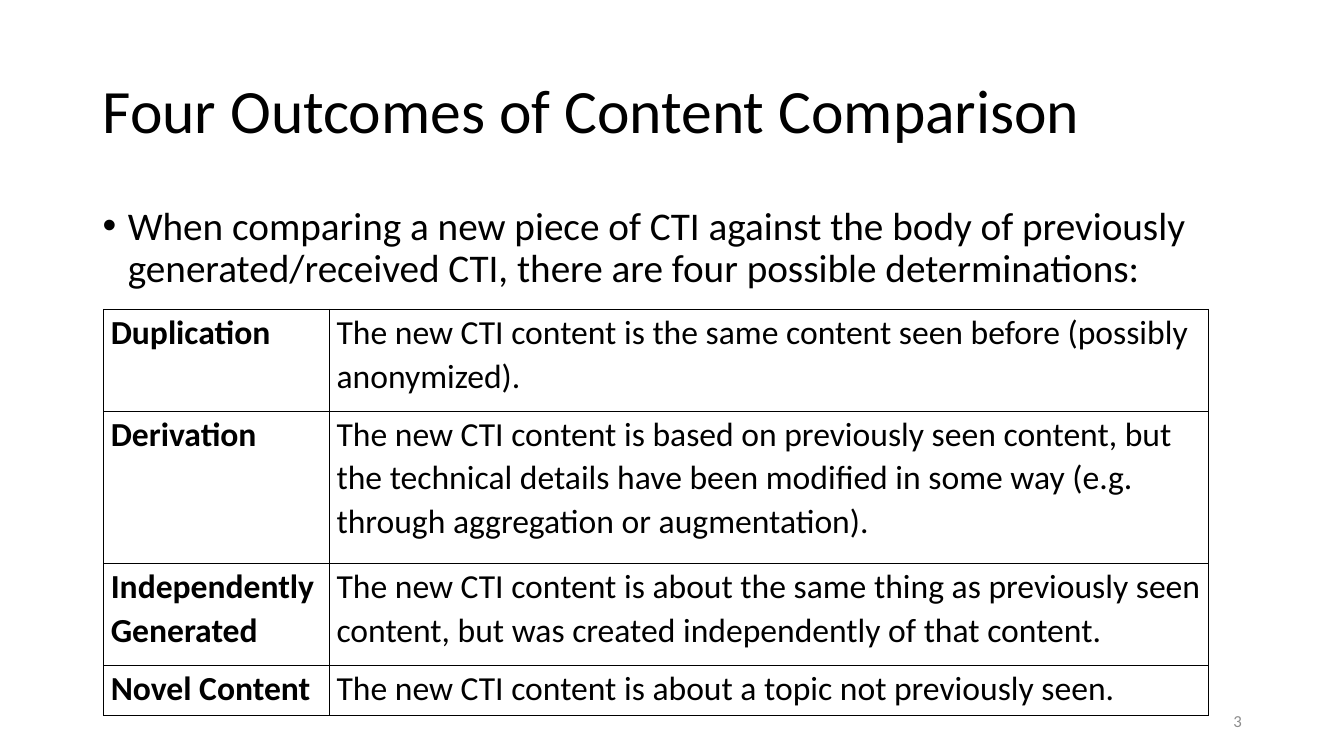
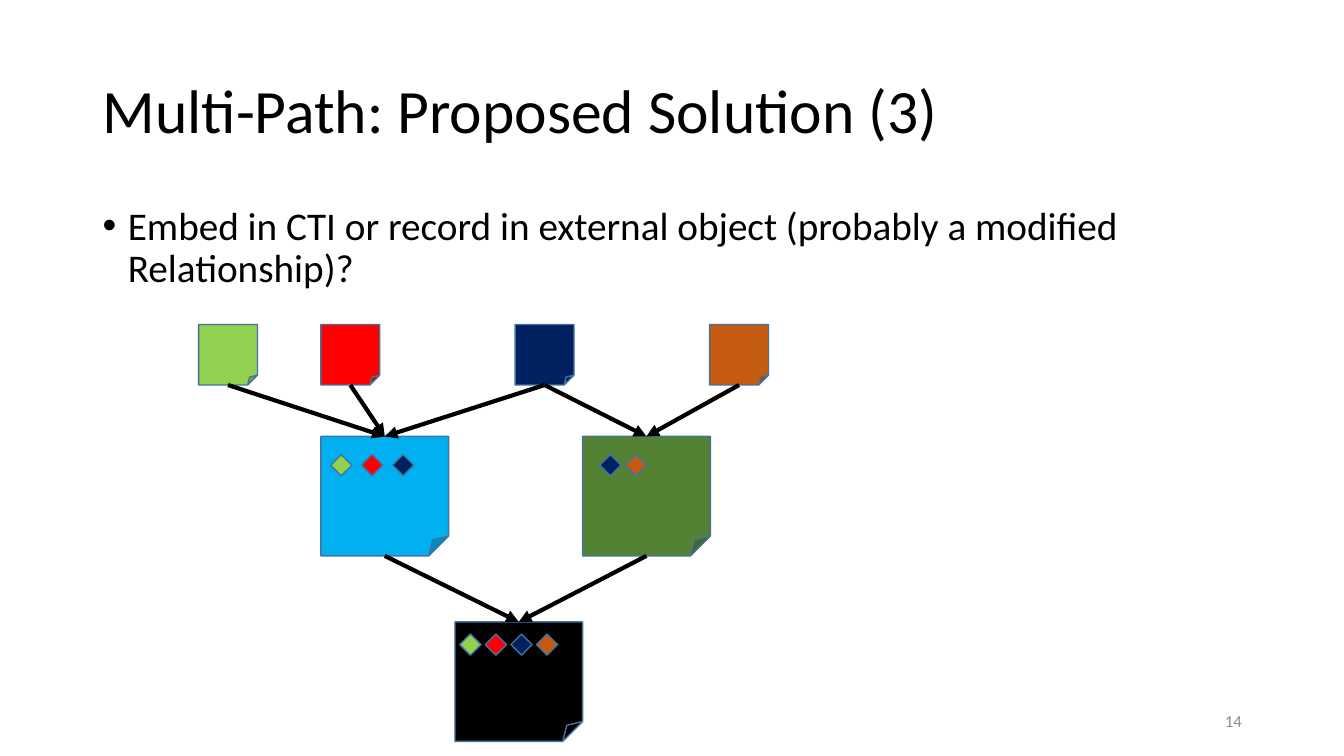
from dataclasses import dataclass
from typing import Any

from lxml import etree
from pptx import Presentation
from pptx import util as u
from pptx.dml.color import RGBColor
from pptx.enum import shapes, text
from pptx.oxml import ns

SLIDE_WIDTH, SLIDE_HEIGHT = u.Inches(13.33), u.Inches(7.5)
FONT = "Calibri"
COLOURS = {
    "black": "000000", "grey": "8C8C8C", "outline": "43739E",
    "lime": "92D050", "red": "FF0000", "navy": "002060", "orange": "C55A11",
    "sky": "00B0F0", "green": "548235",
}


@dataclass(frozen=True)
class Box:
    """Left, top, width and height in percent of the slide's size."""
    left: float
    top: float
    width: float
    height: float

    def lengths(self) -> tuple[int, int, int, int]:
        return across(self.left), down(self.top), across(self.width), down(self.height)


@dataclass(frozen=True)
class TextStyle:
    box: Box
    size: int
    colour: str = "black"
    anchor: Any = text.MSO_ANCHOR.MIDDLE
    alignment: Any = text.PP_ALIGN.LEFT
    spacing: float = 1.0
    bullet: str = ""


@dataclass(frozen=True)
class Marks:
    """A row of diamonds, placed relative to its note."""
    colours: tuple[str, ...]
    inset: float
    drop: float
    step: float


@dataclass(frozen=True)
class Note:
    colour: str
    box: Box
    targets: tuple[str, ...] = ()
    marks: Marks | None = None


# Shared text styles
TITLE = TextStyle(Box(6.9, 5.33, 86.25, 19.33), 44, spacing=0.9)
BODY = TextStyle(Box(6.9, 26.67, 86.25, 12.8), 28, anchor=text.MSO_ANCHOR.TOP,
                 spacing=0.9, bullet="•")
NUMBER = TextStyle(Box(70.65, 92.67, 22.5, 5.33), 12, "grey",
                   alignment=text.PP_ALIGN.RIGHT)

# Outcome table
TABLE_LEFT, TABLE_TOP = 7.72, 40.93
COLUMN_WIDTHS = (16.8, 65.4)
ROW_HEIGHTS = (13.47, 20.13, 13.47, 6.67)
OUTCOMES = (
    ("Duplication",
     "The new CTI content is the same content seen before (possibly anonymized)."),
    ("Derivation",
     "The new CTI content is based on previously seen content, but the technical details "
     "have been modified in some way (e.g. through aggregation or augmentation)."),
    ("Independently Generated",
     "The new CTI content is about the same thing as previously seen content, but was "
     "created independently of that content."),
    ("Novel Content", "The new CTI content is about a topic not previously seen."),
)


# Content notes, by tier
def source_box(left: float) -> Box:
    return Box(left, 42.93, 4.38, 8)


def report_box(left: float, top: float) -> Box:
    return Box(left, top, 9.5, 15.8)


NOTES = (
    Note("lime", source_box(14.78), ("sky",)),
    Note("red", source_box(23.88), ("sky",)),
    Note("navy", source_box(38.33), ("sky", "green")),
    Note("orange", source_box(52.8), ("green",)),
    Note("sky", report_box(23.88, 57.73), ("black",),
         Marks(("lime", "red", "navy"), 0.72, 2.4, 2.3)),
    Note("green", report_box(43.35, 57.73), ("black",),
         Marks(("navy", "orange"), 1.28, 2.4, 1.9)),
    Note("black", report_box(33.85, 82.27), (),
         Marks(("lime", "red", "navy", "orange"), 0.36, 1.6, 1.9)),
)


def across(percent: float) -> int:
    return round(SLIDE_WIDTH * percent / 100)


def down(percent: float) -> int:
    return round(SLIDE_HEIGHT * percent / 100)


def rgb(colour: str) -> RGBColor:
    return RGBColor.from_string(COLOURS[colour])


def apply_format(target: Any, values: dict[str, Any]) -> None:
    for name, value in values.items():
        setattr(target, name, value)


def add_element(parent: Any, tag: str, **attributes: str) -> Any:
    return etree.SubElement(parent, ns.qn(tag), attributes)


def write(paragraph: Any, words: str, size: int, colour: str = "black",
          bold: bool = False) -> None:
    run = paragraph.add_run()
    run.text = words
    apply_format(run.font, {"name": FONT, "size": u.Pt(size), "bold": bold})
    run.font.color.rgb = rgb(colour)


def add_text(slide: Any, style: TextStyle, words: str) -> None:
    frame = slide.shapes.add_textbox(*style.box.lengths()).text_frame
    apply_format(frame, {"word_wrap": True, "vertical_anchor": style.anchor})
    paragraph = frame.paragraphs[0]
    apply_format(paragraph, {"alignment": style.alignment, "line_spacing": style.spacing})
    if style.bullet:
        paragraph.space_before = u.Pt(10)
        properties = paragraph._p.get_or_add_pPr()
        indent = u.Inches(0.25)
        properties.set("marL", str(indent))
        properties.set("indent", str(-indent))
        add_element(properties, "a:buFont", typeface="Arial")
        add_element(properties, "a:buChar", char=style.bullet)
    write(paragraph, words, style.size, style.colour)


def add_page(presentation: Any, title: str, body: str, number: int) -> Any:
    slide = presentation.slides.add_slide(presentation.slide_layouts[6])
    for style, words in ((TITLE, title), (BODY, body), (NUMBER, str(number))):
        add_text(slide, style, words)
    return slide


def format_cell(cell: Any, words: str, bold: bool) -> None:
    side = u.Inches(0.07)
    apply_format(cell, {"margin_left": side, "margin_right": side,
                        "margin_top": 0, "margin_bottom": 0})
    paragraph = cell.text_frame.paragraphs[0]
    paragraph.line_spacing = 1.07
    write(paragraph, words, 24, bold=bold)
    properties = cell._tc.get_or_add_tcPr()
    for edge in ("a:lnL", "a:lnR", "a:lnT", "a:lnB"):
        border = add_element(properties, edge, w=str(u.Pt(1)))
        add_element(add_element(border, "a:solidFill"), "a:srgbClr", val=COLOURS["black"])
    cell.fill.background()


def add_outcomes(slide: Any) -> None:
    box = Box(TABLE_LEFT, TABLE_TOP, sum(COLUMN_WIDTHS), sum(ROW_HEIGHTS))
    table = slide.shapes.add_table(len(OUTCOMES), len(COLUMN_WIDTHS), *box.lengths()).table
    apply_format(table, {"first_row": False, "horz_banding": False})
    for column, width in zip(table.columns, COLUMN_WIDTHS):
        column.width = across(width)
    for row, height, entries in zip(table.rows, ROW_HEIGHTS, OUTCOMES):
        row.height = down(height)
        for index, words in enumerate(entries):
            format_cell(row.cells[index], words, bold=index == 0)


def add_filled(slide: Any, kind: Any, box: Box, colour: str) -> Any:
    shape = slide.shapes.add_shape(kind, *box.lengths())
    shape.shadow.inherit = False
    shape.fill.solid()
    shape.fill.fore_color.rgb = rgb(colour)
    shape.line.color.rgb = rgb("outline")
    shape.line.width = u.Pt(1)
    return shape


def add_arrow(slide: Any, origin: Any, target: Any) -> None:
    connector = slide.shapes.add_connector(shapes.MSO_CONNECTOR.STRAIGHT, 0, 0, 0, 0)
    connector.begin_connect(origin, 2)
    connector.end_connect(target, 0)
    connector.line.color.rgb = rgb("black")
    connector.line.width = u.Pt(3)
    add_element(connector.line._get_or_add_ln(), "a:tailEnd", type="triangle")
    add_element(connector._element.spPr, "a:effectLst")


def add_marks(slide: Any, note: Note, marks: Marks) -> None:
    for index, colour in enumerate(marks.colours):
        left = note.box.left + marks.inset + index * marks.step
        box = Box(left, note.box.top + marks.drop, 1.58, 2.8)
        add_filled(slide, shapes.MSO_SHAPE.DIAMOND, box, colour)


def add_paths(slide: Any) -> None:
    drawn = {note.colour: add_filled(slide, shapes.MSO_SHAPE.FOLDED_CORNER,
                                     note.box, note.colour) for note in NOTES}
    for note in NOTES:
        for target in note.targets:
            add_arrow(slide, drawn[note.colour], drawn[target])
    for note in NOTES:
        if note.marks:
            add_marks(slide, note, note.marks)


def main() -> None:
    presentation = Presentation()
    apply_format(presentation, {"slide_width": SLIDE_WIDTH, "slide_height": SLIDE_HEIGHT})
    add_outcomes(add_page(
        presentation, "Four Outcomes of Content Comparison",
        "When comparing a new piece of CTI against the body of previously "
        "generated/received CTI, there are four possible determinations:", 3))
    add_paths(add_page(
        presentation, "Multi-Path: Proposed Solution (3)",
        "Embed in CTI or record in external object (probably a modified Relationship)?", 14))
    presentation.save("out.pptx")


if __name__ == "__main__":
    main()
